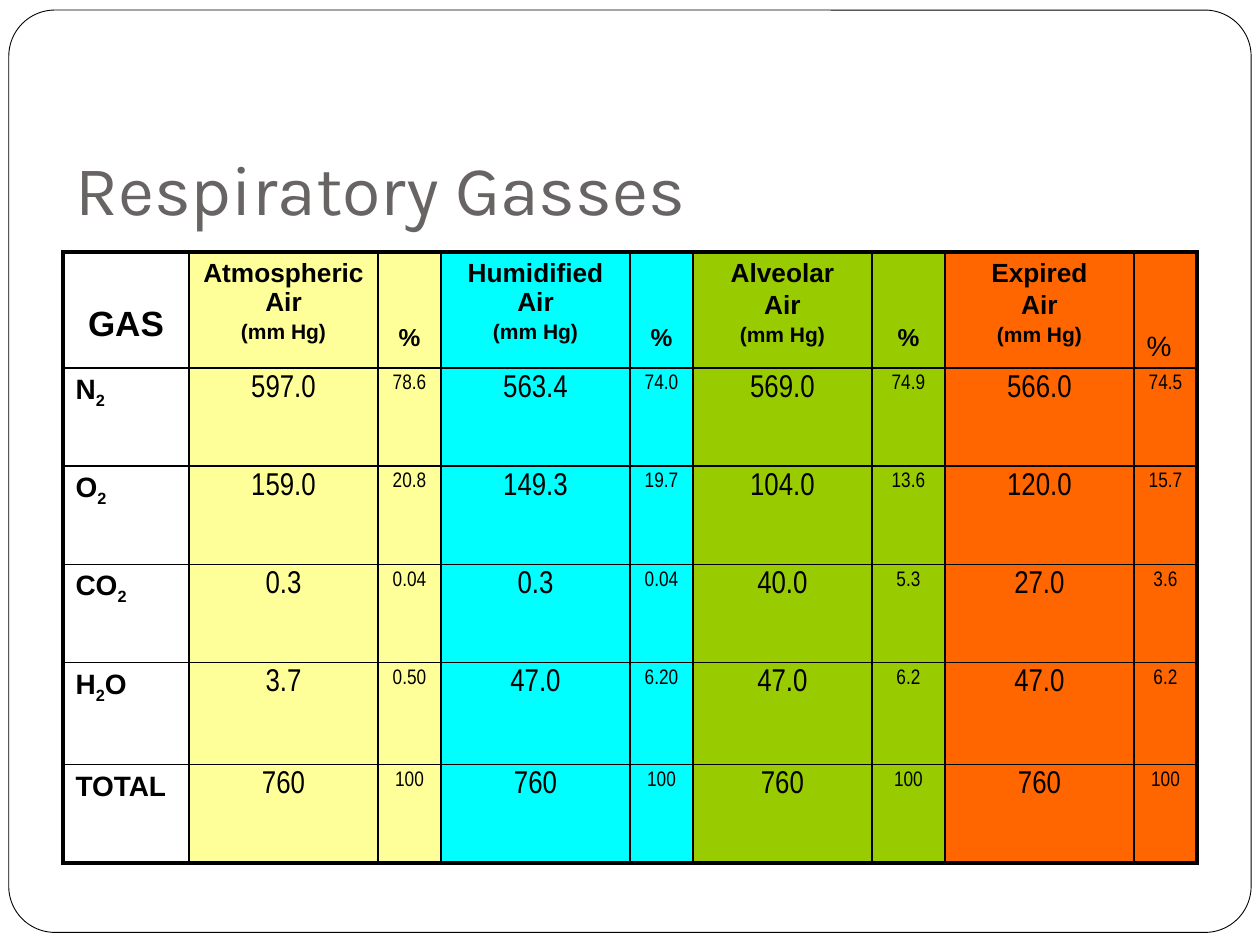
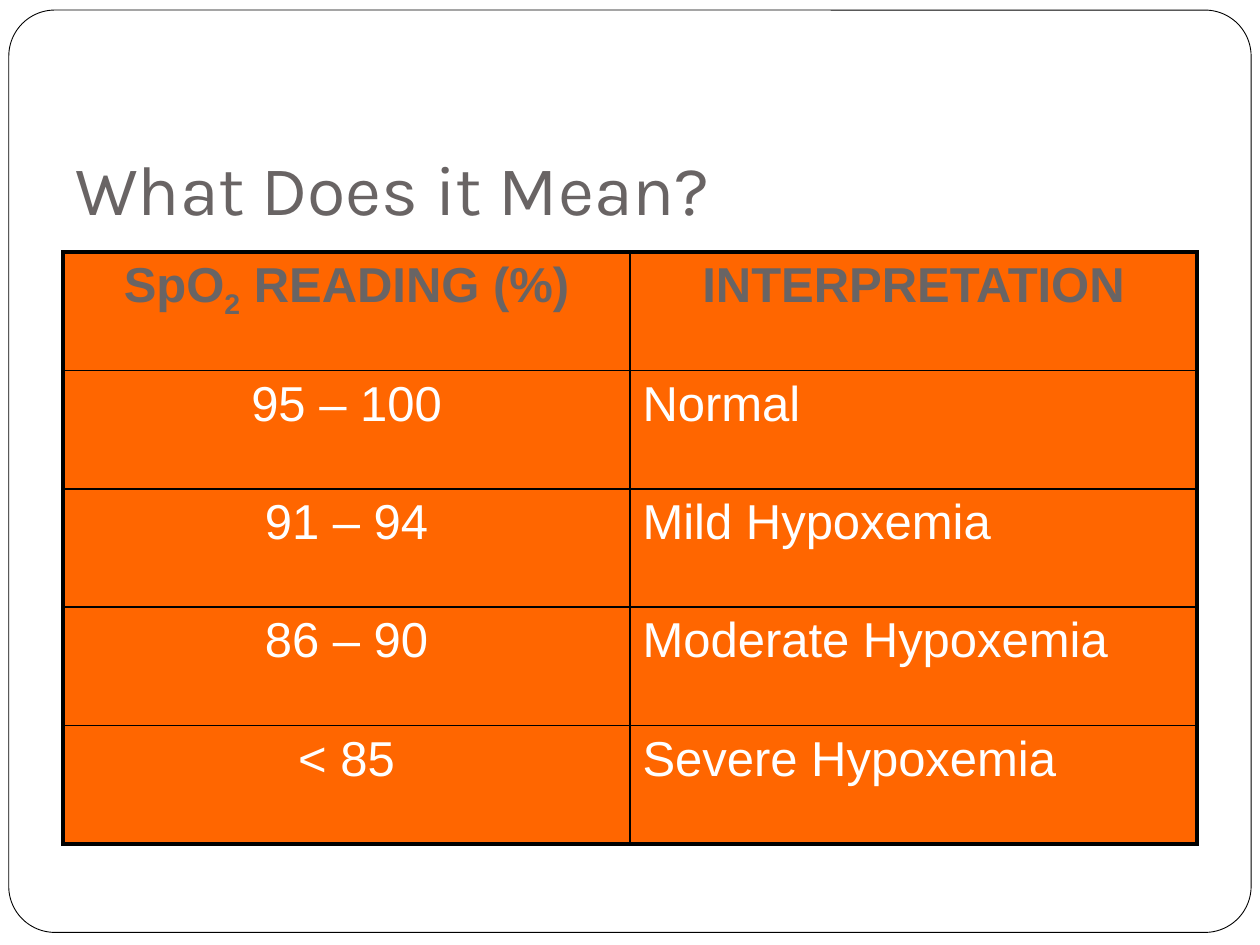
from lxml import etree
from pptx import Presentation, util as u
from pptx.dml.color import RGBColor
from pptx.enum import shapes, text as tx
from pptx.oxml.ns import qn

HUE = {"ink": "000000", "paper": "FFFFFF", "grey": "696464", "sand": "FFFF99",
       "cyan": "00FFFF", "lime": "99CC00", "rust": "FF6600"}
UNIT = u.Inches(0.5)  # the slide is a grid of 20 columns by 15 rows
LEFT, TOP, WIDE = 1, 4, 18
MID, START = tx.PP_ALIGN.CENTER, tx.PP_ALIGN.LEFT
THIN, THICK = 1, 2.25


def write(frame, words, size=16, last=None, font="Arial", hue="ink",
          bold=False, align=START, gap=2):
    """Fill a frame: newlines part paragraphs, underscores enclose subscripts."""
    frame.word_wrap = True
    lines = words.split("\n")
    for i, line in enumerate(lines):
        para = frame.paragraphs[0] if i == 0 else frame.add_paragraph()
        para.alignment = align
        para.space_before = u.Pt(gap if i else 0)
        for j, part in enumerate(line.split("_")):
            if not part:
                continue
            run = para.add_run()
            run.text = part
            run.font.name, run.font.bold = font, bold
            run.font.size = u.Pt(last if last and i == len(lines) - 1 else size)
            run.font.color.rgb = RGBColor.from_string(HUE[hue])
            if j % 2:
                run._r.get_or_add_rPr().set("baseline", "-25000")


def edge(cell, widths):
    """Draw cell borders, widths in points: left, right, top, bottom."""
    props = cell._tc.get_or_add_tcPr()
    for k, (side, width) in enumerate(zip("LRTB", widths)):
        line = etree.Element(qn(f"a:ln{side}"), w=str(u.Pt(width)))
        fill = etree.SubElement(line, qn("a:solidFill"))
        etree.SubElement(fill, qn("a:srgbClr"), val=HUE["ink"])
        props.insert(k, line)


# Gas table: each cell is (words, fill, top margin in inches, format)
airs = [("Atmospheric Air", "sand"), ("Humidified Air", "cyan"),
        ("Alveolar\nAir", "lime"), ("Expired\nAir", "rust")]
gases = [
    ("N_2", "597.0 78.6 563.4 74.0 569.0 74.9 566.0 74.5"),
    ("O_2", "159.0 20.8 149.3 19.7 104.0 13.6 120.0 15.7"),
    ("CO_2", "0.3 0.04 0.3 0.04 40.0 5.3 27.0 3.6"),
    ("H_2_O", "3.7 0.50 47.0 6.20 47.0 6.2 47.0 6.2"),
    ("TOTAL", "760 100 760 100 760 100 760 100"),
]
head = [("GAS", "paper", 0.42, dict(size=20, bold=True, align=MID))]
for name, hue in airs:
    head.append((name + "\n(mm Hg)", hue, 0.05,
                 dict(size=15, last=12, bold=True, align=MID)))
    if hue == "rust":
        head.append(("%", hue, 0.63, dict(size=16)))
    else:
        head.append(("%", hue, 0.57, dict(size=14, bold=True, align=MID)))
gas = [head]
for name, data in gases:
    row = [(name, "paper", 0.05, dict(size=16, bold=True))]
    for i, value in enumerate(data.split()):
        row.append((value, airs[i // 2][1], 0.05,
                    dict(size=12 if i % 2 else 18, font="Arial Narrow", align=MID)))
    gas.append(row)

# Saturation table
levels = [("95 – 100", "Normal"), ("91 – 94", "Mild Hypoxemia"),
          ("86 – 90", "Moderate Hypoxemia"), ("< 85", "Severe Hypoxemia")]
sat = [[(name, "rust", 0.05, dict(size=28, hue="grey", bold=True, align=MID))
        for name in ("SpO_2_ READING (%)", "INTERPRETATION")]]
for level in levels:
    sat.append([(words, "rust", 0.05, dict(size=28, hue="paper", align=align))
                for words, align in zip(level, (MID, START))])

sheets = [
    ("Respiratory Gasses", gas, [2, 3, 1, 3, 1, 2.84, 1.16, 3, 1],
     [1.84, 1.56, 1.56, 1.56, 1.62, 1.56]),
    ("What Does it Mean?", sat, [WIDE / 2] * 2, [1.88] * 5),
]

deck = Presentation()
deck.slide_width, deck.slide_height = 20 * UNIT, 15 * UNIT

for title, cells, cols, rows in sheets:
    slide = deck.slides.add_slide(deck.slide_layouts[6])

    card = slide.shapes.add_shape(
        shapes.MSO_SHAPE.ROUNDED_RECTANGLE, u.Inches(0.07), u.Inches(0.08),
        u.Inches(9.86), u.Inches(7.32))
    card.adjustments[0] = 0.05
    card.shadow.inherit = False
    card.fill.solid()
    card.fill.fore_color.rgb = RGBColor.from_string(HUE["paper"])
    card.line.color.rgb = RGBColor.from_string(HUE["ink"])
    card.line.width = u.Pt(0.5)

    box = slide.shapes.add_textbox(LEFT * UNIT, u.Inches(0.67), WIDE * UNIT, u.Inches(1.25))
    frame = box.text_frame
    frame.vertical_anchor = tx.MSO_ANCHOR.BOTTOM
    frame.margin_bottom = u.Inches(0.1)
    write(frame, title, size=40, font="Karla", hue="grey")

    table = slide.shapes.add_table(
        len(rows), len(cols), LEFT * UNIT, TOP * UNIT, WIDE * UNIT,
        int(sum(rows) * UNIT)).table
    table.first_row = table.horz_banding = False
    for col, width in zip(table.columns, cols):
        col.width = int(width * UNIT)
    for r, row in enumerate(cells):
        table.rows[r].height = int(rows[r] * UNIT)
        for c, (words, hue, top, form) in enumerate(row):
            cell = table.cell(r, c)
            cell.margin_top = u.Inches(top)
            cell.margin_bottom = 0
            cell.fill.solid()
            cell.fill.fore_color.rgb = RGBColor.from_string(HUE[hue])
            write(cell.text_frame, words, **form)
            outer = (c == 0, c == len(cols) - 1, r == 0, r == len(rows) - 1)
            edge(cell, [THICK if rim else THIN for rim in outer])

deck.save("out.pptx")
